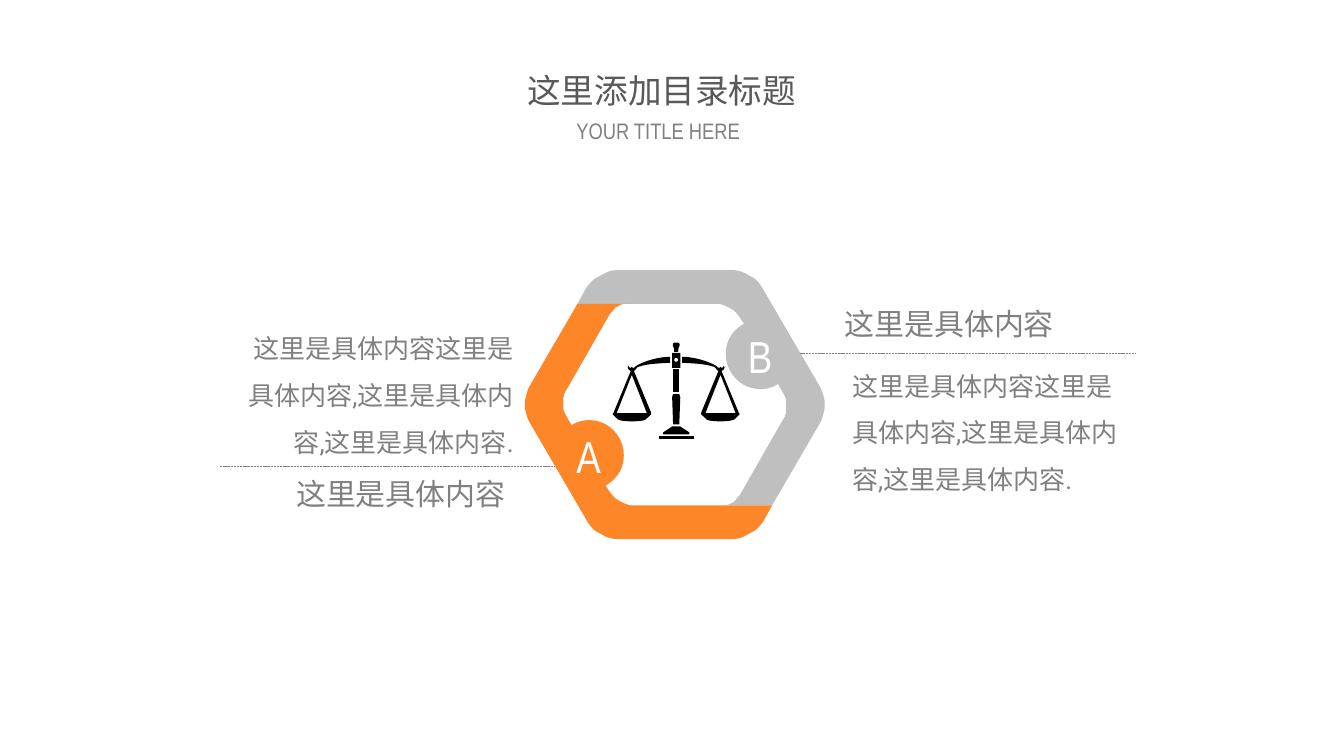
import lxml.etree
import pptx
import pptx.dml.color
import pptx.enum.dml
import pptx.enum.text
import pptx.oxml.ns
import pptx.util

Pt = pptx.util.Pt
ALIGN = pptx.enum.text.PP_ALIGN

COLOURS = {
    "grey": "BFBFBF",
    "orange": "FC8628",
    "black": "000000",
    "white": "FFFFFF",
    "title": "595959",
    "text": "808080",
}

# Text styles: font values, paragraph values, colour
STYLES = {
    "title": ({"name": "Roboto", "size": Pt(24)}, {"alignment": ALIGN.CENTER}, "title"),
    "subtitle": ({"name": "Arial Narrow", "size": Pt(16)}, {"alignment": ALIGN.CENTER}, "text"),
    "letter": ({"name": "Arial Narrow", "size": Pt(32)}, {"alignment": ALIGN.CENTER}, "white"),
    "heading": ({"name": "Roboto", "size": Pt(21.4)}, {}, "text"),
    "body": ({"name": "Roboto", "size": Pt(18.6)}, {"line_spacing": 1.5}, "text"),
    "body right": ({"name": "Roboto", "size": Pt(18.6)},
                   {"line_spacing": 1.5, "alignment": ALIGN.RIGHT}, "text"),
}

HEADING = "这里是具体内容"
BODY = "这里是具体内容这里是具体内容,这里是具体内容,这里是具体内容."

# Outlines are relative to a centre: pairs are corners, sixes are Bézier curves
HALF_RING = [
    (-69.5, -72), (-63, -83.8), (-60.9, -86, -59.3, -88.8, -56.5, -90.3),
    (-50, -93.9), (-47.2, -95.3, -44.3, -96, -41.4, -96),
    (41.4, -96), (44.3, -96, 47.2, -95.3, 50.1, -93.9),
    (56.6, -90.3), (58.7, -88.8, 60.9, -86, 62.3, -83.8),
    (104.1, -12), (105.5, -9.6, 106.2, -6, 107, -3),
    (107, 3), (106.2, 6, 105.5, 9.6, 104.1, 12.5),
    (69.5, 72), (32, 72), (37, 72), (42.2, 69.5), (43.6, 68.1, 45, 66, 46.5, 64.5),
    (77.4, 10.5), (78.9, 8.4, 79.6, 6.2, 79.6, 4),
    (79.6, -2), (79.6, -4, 78.9, -6, 77.4, -8.2),
    (73.8, -14.7), (71, -13.2), (68.1, -11.8, 64.5, -11.1, 60.9, -11.1),
    (47.2, -11.1, 36.4, -22.6, 36.4, -36.3), (36.4, -44.9, 40.7, -52.1, 47.2, -56.4),
    (49.4, -57.9), (46.5, -62.2), (45, -64.4, 43.6, -65.8, 42.2, -67.2),
    (38.6, -69.4), (35, -71, 32.8, -72, 30.6, -72),
]
PAN = [
    (4.3, 10.1), (4.3, 14.4), (25.9, 15.1, 28.1, 18, 28.1, 18),
    (28.1, 18, 28.8, 19.4, 30.2, 20.2), (18, 49.7), (17.8, 51.1), (21.6, 54.7),
    (21.6, 54.7, 22.3, 56.2, 31.7, 56.2), (40.3, 56.2, 41.8, 54.7, 41.8, 54.7),
    (45.4, 51.1), (44.6, 49.7), (32.4, 20.2), (34.6, 19.4, 34.6, 17.3, 34.6, 17.3),
    (33.8, 16.6), (33.8, 16.6, 33.8, 18, 32.4, 18), (31.7, 17.3), (31, 18),
    (29.5, 18, 28.8, 16.6, 28.8, 16.6), (19.4, 11.5, 9.4, 10.1, 4.3, 10.1),
]
PAN_HOLE = [(20.9, 50.4), (31.7, 23), (42.5, 50.4)]
PIVOT_HOLE = [(-1.4, 12.2), (-1.4, 10.3, 1.4, 10.3, 1.4, 12.2), (1.4, 14.1, -1.4, 14.1, -1.4, 12.2)]
# Right halves of the symmetric parts of the stand, top to bottom
FINIAL = [(1.4, 0), (2.4, 0.7), (2.4, 2.2), (1.6, 4), (1.4, 6.5)]
COLLAR = [(2.9, 7.2), (2.9, 18)]
POST = [(2.2, 18.7), (2.2, 35.3)]
COLUMN = [(2.2, 36.7), (2.9, 38.9), (2.2, 58.3)]
FOOT = [(2.9, 59.8), (9.4, 64.1), (9.4, 65.5)]
BASE = [(12.6, 67), (12.6, 69.1)]


def colour(name):
    return pptx.dml.color.RGBColor.from_string(COLOURS[name])


def symmetric(half):
    return half + [(-x, y) for x, y in reversed(half)]


def flatten(contour, steps=10):
    """Turn corners and curves into a list of points."""
    points = []
    for part in contour:
        if len(part) == 2:
            points.append(part)
            continue
        start, (ax, ay, bx, by, cx, cy) = points[-1], part
        for step in range(1, steps + 1):
            t = step / steps
            weights = ((1 - t) ** 3, 3 * t * (1 - t) ** 2, 3 * t * t * (1 - t), t ** 3)
            points.append(tuple(sum(w * v for w, v in zip(weights, values))
                                for values in ((start[0], ax, bx, cx), (start[1], ay, by, cy))))
    return points


def add_outline(shapes, contours, centre, fill, flip_x=1, flip_y=1):
    builder = None
    for contour in contours:
        points = [(Pt(centre[0] + flip_x * x), Pt(centre[1] + flip_y * y))
                  for x, y in flatten(contour)]
        if builder is None:
            builder = shapes.build_freeform(*points[0], scale=1.0)
        else:
            builder.move_to(*points[0])
        builder.add_line_segments(points[1:], close=True)
    shape = builder.convert_to_shape()
    shape.shadow.inherit = False
    shape.fill.solid()
    shape.fill.fore_color.rgb = colour(fill)
    shape.line.fill.background()


def add_text(page, text, style, left, top, width, height, inset=(9.6, 4.8), wrap=True):
    box = page.shapes.add_textbox(Pt(left), Pt(top), Pt(width), Pt(height))
    frame = box.text_frame
    across, down = map(Pt, inset)
    frame_values = {
        "word_wrap": wrap, "auto_size": pptx.enum.text.MSO_AUTO_SIZE.SHAPE_TO_FIT_TEXT,
        "margin_left": across, "margin_right": across, "margin_top": down, "margin_bottom": down,
    }
    font_values, para_values, colour_name = STYLES[style]
    para = frame.paragraphs[0]
    span = para.add_run()
    span.text = text
    for target, values in ((frame, frame_values), (para, para_values), (span.font, font_values)):
        for name, value in values.items():
            setattr(target, name, value)
    span.font.color.rgb = colour(colour_name)


def add_dashed_line(page, left, right, y):
    line = page.shapes.add_connector(
        pptx.enum.shapes.MSO_CONNECTOR.STRAIGHT, Pt(left), Pt(y), Pt(right), Pt(y))
    line.line.color.rgb = colour("text")
    line.line.width = Pt(0.5)
    line.line.dash_style = pptx.enum.dml.MSO_LINE.SQUARE_DOT
    lxml.etree.SubElement(line._element.spPr, pptx.oxml.ns.qn("a:effectLst"))


def add_scales(page, centre):
    group = page.shapes.add_group_shape()
    for half in (POST, COLUMN, FOOT, BASE, FINIAL):
        add_outline(group.shapes, [symmetric(half)], centre, "black")
    add_outline(group.shapes, [symmetric(COLLAR), PIVOT_HOLE], centre, "black")
    for side in (-1, 1):
        add_outline(group.shapes, [PAN, PAN_HOLE], centre, "black", flip_x=side)


def main():
    deck = pptx.Presentation()
    deck.slide_width, deck.slide_height = Pt(960), Pt(540)
    page = deck.slides.add_slide(deck.slide_layouts[6])

    # Hexagon ring: the second half is the first turned by 180 degrees
    for letter, fill, turn, left, top in (("B", "grey", 1, 500.4, 229.7),
                                          ("A", "orange", -1, 378, 301.7)):
        add_outline(page.shapes, [HALF_RING], (482, 289), fill, turn, turn)
        add_text(page, letter, "letter", left, top, 85, 48.2)

    # Scales in the middle
    add_scales(page, (483, 244.8))

    # Right content
    add_dashed_line(page, 571.7, 811.4, 252.7)
    add_text(page, BODY, "body", 599, 248.4, 212.4, 108)
    add_text(page, HEADING, "heading", 596.2, 214.6, 165.6, 33.1, (7.2, 3.6), False)

    # Left content
    add_text(page, BODY, "body right", 164.2, 221.8, 212.4, 108)
    add_dashed_line(page, 157, 396.7, 333.4)
    add_text(page, HEADING, "heading", 204.5, 336.2, 165.6, 33.1, (7.2, 3.6), False)

    # Titles
    add_text(page, "这里添加目录标题", "title", 365, 45.4, 215.3, 38.9)
    add_text(page, "YOUR TITLE HERE", "subtitle", 401, 79.2, 138.2, 28.8)

    deck.save("out.pptx")


if __name__ == "__main__":
    main()
